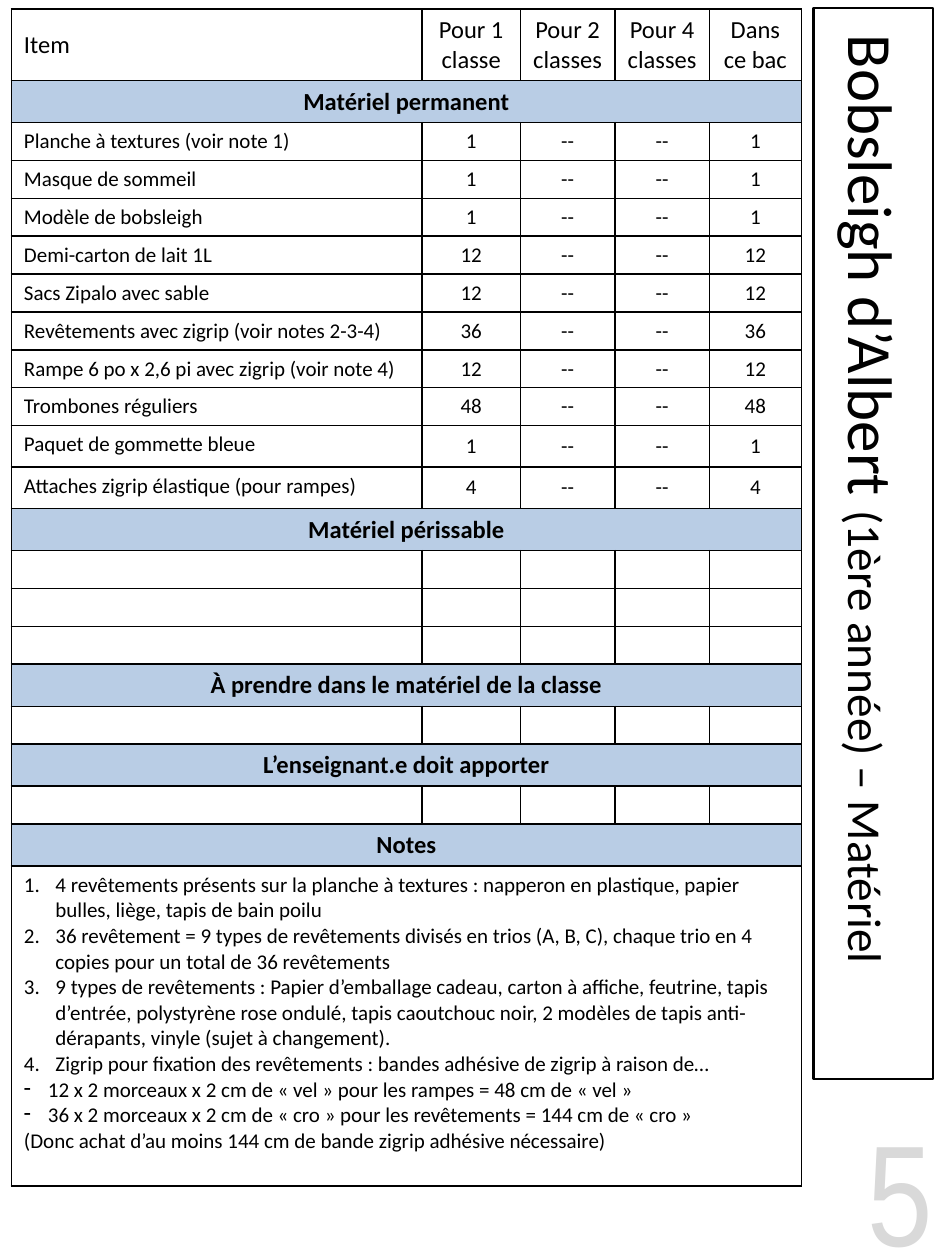
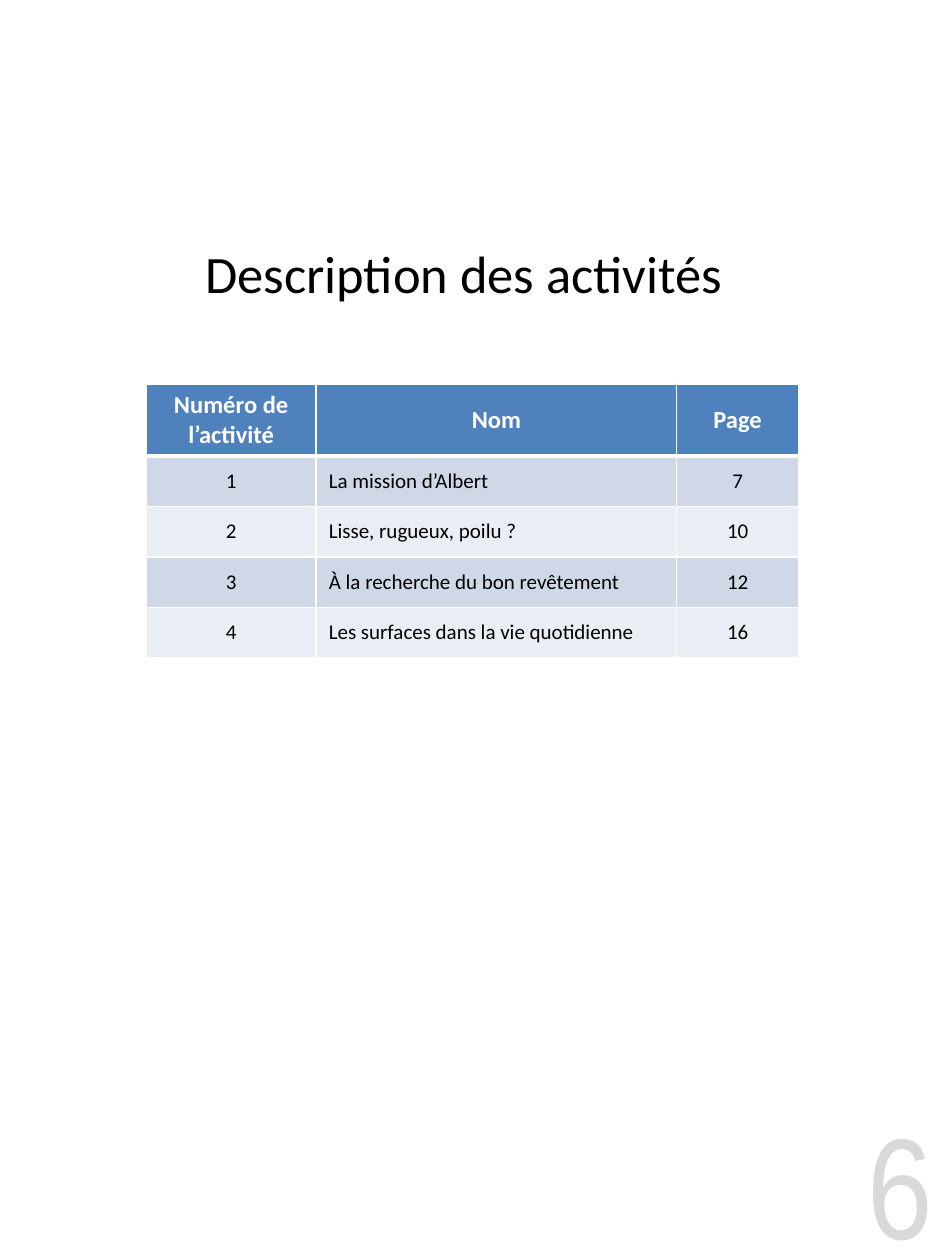
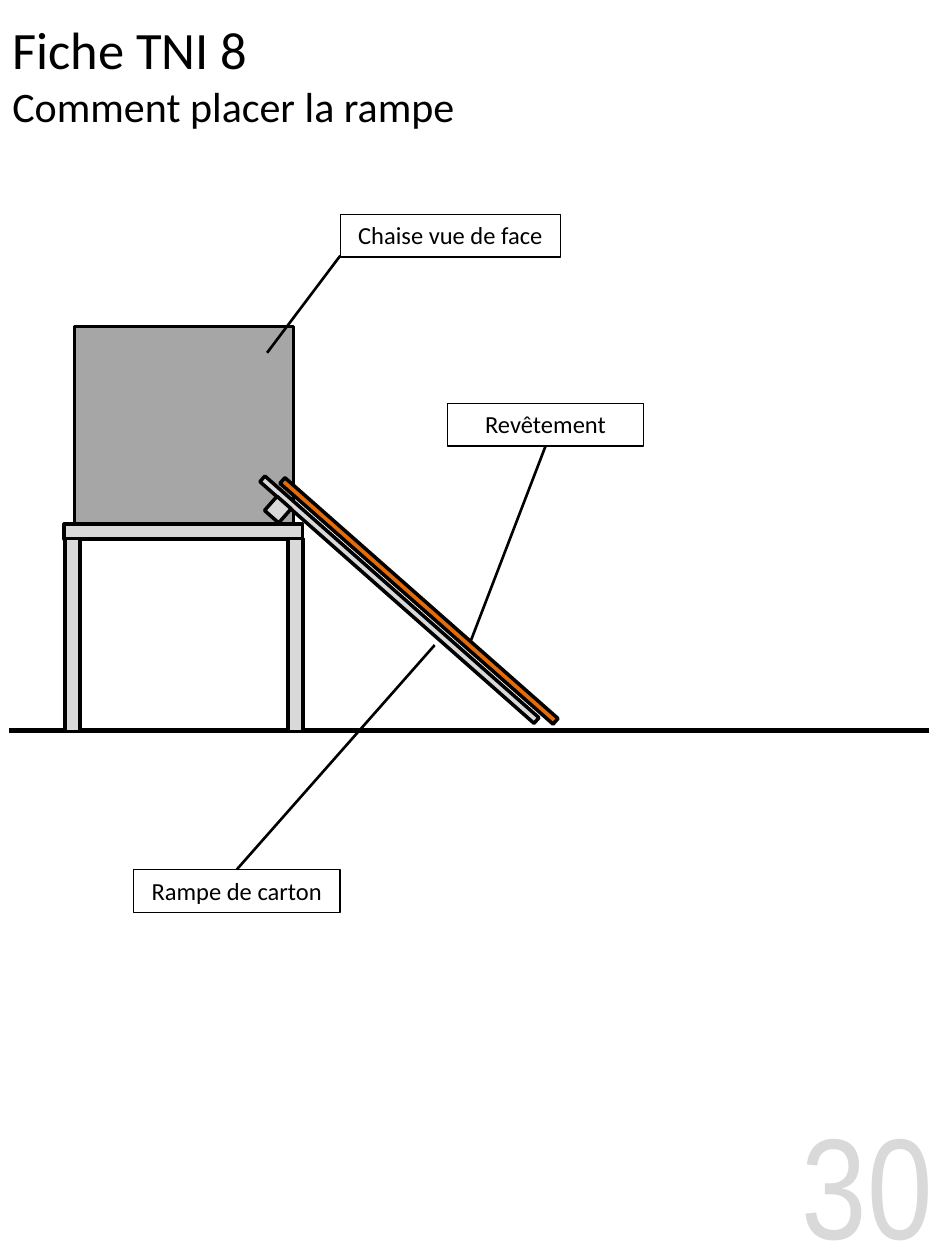
from dataclasses import dataclass

from lxml import etree
from pptx import Presentation
from pptx.dml.color import RGBColor as RGB
from pptx.enum.shapes import MSO_CONNECTOR as CONN, MSO_SHAPE as SHAPE
from pptx.enum.text import MSO_ANCHOR as ANCHOR, PP_ALIGN as ALIGN
from pptx.oxml.ns import qn
from pptx.util import Inches, Pt


@dataclass(frozen=True)
class Theme:
    font: str = "Calibri"
    number_font: str = "Arial Narrow"
    black: str = "000000"
    white: str = "FFFFFF"
    number: str = "D9D9D9"
    band: str = "B9CDE5"
    header: str = "4F81BD"
    odd_row: str = "D0D8E8"
    even_row: str = "E9EDF4"
    chair_back: str = "A6A6A6"
    board: str = "D9D9D9"
    covering: str = "E46C0A"
    number_size: int = 82
    big_title: int = 36
    big_subtitle: int = 27
    title: int = 30
    subtitle: int = 24
    heading: int = 14
    body: int = 12


T = Theme()


def write(tf, lines, sizes, color=T.black, align=ALIGN.LEFT, bold=False, font=T.font):
    """Fill a text frame; each line is a list of runs, sized in order by sizes."""
    for i, runs in enumerate(lines):
        p = tf.paragraphs[0] if i == 0 else tf.add_paragraph()
        p.alignment = align
        if not any(runs):
            etree.SubElement(p._p, qn("a:endParaRPr"), sz=str(sizes[0] * 100))
            continue
        for j, text in enumerate(runs):
            if j and "\v" in runs[j - 1]:
                p.add_line_break()
            r = p.add_run()
            r.text = text.replace("\v", "")
            r.font.name, r.font.size, r.font.bold = font, Pt(sizes[j]), bold
            r.font.color.rgb = RGB.from_string(color)


def style_cell(cell, line, fill=None, bottom=1, anchor=ANCHOR.MIDDLE):
    """Give a table cell its four borders, its fill and its anchor."""
    cell.vertical_anchor = anchor
    tc_pr = cell._tc.get_or_add_tcPr()
    for side in "LRTB":
        width = bottom if side == "B" else 1
        ln = etree.SubElement(tc_pr, qn(f"a:ln{side}"), w=str(Pt(width)))
        solid = etree.SubElement(ln, qn("a:solidFill"))
        etree.SubElement(solid, qn("a:srgbClr"), val=line)
    if fill:
        cell.fill.solid()
        cell.fill.fore_color.rgb = RGB.from_string(fill)
    else:
        cell.fill.background()


prs = Presentation()
prs.slide_width, prs.slide_height = Inches(7.5), Inches(10)

# Page numbers and titles: number, its box, title runs, sizes, title box, alignment, rotation
pages = [
    ("5", (5.75, 8.88, 1.75, 1.12),
     [" Bobsleigh d’Albert ", "(1ère année) – Matériel"], (T.big_title, T.big_subtitle),
     (2.68, 3.84, 8.5, 0.95), ALIGN.LEFT, 90),
    ("6", (6.28, 8.76, 1.22, 1.24),
     ["Description des activités "], (T.title,),
     (0.41, 1.69, 6.64, 0.95), ALIGN.CENTER, 0),
    ("30", (5.79, 8.76, 1.71, 1.24),
     ["Fiche TNI 8 \v", "Comment placer la rampe"], (T.title, T.subtitle),
     (0, 0.01, 4.67, 1.15), ALIGN.LEFT, 0),
]
slides = []
for number, number_box, title, sizes, title_box, align, rotation in pages:
    s = prs.slides.add_slide(prs.slide_layouts[6])
    slides.append(s)
    sp = s.shapes.add_textbox(*map(Inches, number_box))
    sp.text_frame.word_wrap = True
    sp.text_frame.vertical_anchor = ANCHOR.MIDDLE
    write(sp.text_frame, [[number]], [T.number_size], T.number, ALIGN.RIGHT, font=T.number_font)

    sp = s.shapes.add_textbox(*map(Inches, title_box))
    sp.rotation = rotation
    sp.text_frame.word_wrap = True
    sp.text_frame.vertical_anchor = ANCHOR.MIDDLE
    write(sp.text_frame, [title], sizes, align=align)
    if rotation:
        sp.line.color.rgb = RGB.from_string(T.black)
        sp.line.width = Pt(1.5)
material, activities, ramp = slides

# Slide 1: material list
items = [
    ("Planche à textures (voir note 1)", 1),
    ("Masque de sommeil", 1),
    ("Modèle de bobsleigh", 1),
    ("Demi-carton de lait 1L", 12),
    ("Sacs Zipalo avec sable", 12),
    ("Revêtements avec zigrip (voir notes 2-3-4)", 36),
    ("Rampe 6 po x 2,6 pi avec zigrip (voir note 4)", 12),
    ("Trombones réguliers", 48),
    ("Paquet de gommette bleue", 1),
    ("Attaches zigrip élastique (pour rampes)", 4),
]
notes = [
    "4 revêtements présents sur la planche à textures : napperon en plastique, papier bulles, "
    "liège, tapis de bain poilu",
    "36 revêtement = 9 types de revêtements divisés en trios (A, B, C), chaque trio en 4 copies "
    "pour un total de 36 revêtements",
    "9 types de revêtements : Papier d’emballage cadeau, carton à affiche, feutrine, tapis "
    "d’entrée, polystyrène rose ondulé, tapis caoutchouc noir, 2 modèles de tapis "
    "anti-dérapants, vinyle (sujet à changement).",
    "Zigrip pour fixation des revêtements : bandes adhésive de zigrip à raison de…",
    "12 x 2 morceaux x 2 cm de « vel » pour les rampes = 48 cm de « vel »",
    "36 x 2 morceaux x 2 cm de « cro » pour les revêtements = 144 cm de « cro »",
    "(Donc achat d’au moins 144 cm de bande zigrip adhésive nécessaire)",
]
empty = [""] * 5
rows = [
    ["Item", "Pour 1 classe", "Pour 2 classes", "Pour 4 classes", "Dans ce bac"],
    ["Matériel permanent"],
    *[[name, str(n), "--", "--", str(n)] for name, n in items],
    ["Matériel périssable"], empty, empty, empty,
    ["À prendre dans le matériel de la classe"], empty,
    ["L’enseignant.e doit apporter"], empty,
    ["Notes"],
    notes,
]
last = len(rows) - 1
widths = [3.26, 0.78, 0.75, 0.75, 0.73]
table = material.shapes.add_table(len(rows), 5, Inches(0.09), Inches(0.07),
                                  Inches(6.27), Inches(9.29)).table
table.first_row = table.horz_banding = False
for column, width in zip(table.columns, widths):
    column.width = Inches(width)
for i, row in enumerate(rows):
    is_band, is_notes = len(row) == 1, i == last
    is_tall = row[0].startswith(("Paquet", "Attaches"))
    height = (0.57 if i == 0 else 2.54 if is_notes else 0.33 if is_band or is_tall else 0.3)
    table.rows[i].height = Inches(height)
    size = T.heading if is_band or i == 0 else T.body
    for j in range(5):
        cell = table.cell(i, j)
        top = is_notes or (is_tall and j == 0)
        style_cell(cell, T.black, T.band if is_band else None,
                   anchor=ANCHOR.TOP if top else ANCHOR.MIDDLE)
        if not is_notes and j < len(row):
            write(cell.text_frame, [[row[j]]], [size], bold=is_band,
                  align=ALIGN.CENTER if is_band or j else ALIGN.LEFT)
    if is_band or is_notes:
        table.cell(i, 0).merge(table.cell(i, 4))

# Notes: four numbered lines, two dashes, one plain line
tf = table.cell(last, 0).text_frame
write(tf, [[note] for note in notes], [T.body])
for i, p in enumerate(tf.paragraphs[:6]):
    indent = Inches(0.25 if i < 4 else 0.19)
    p_pr = p._p.get_or_add_pPr()
    p_pr.set("marL", str(indent))
    p_pr.set("indent", str(-indent))
    if i < 4:
        etree.SubElement(p_pr, qn("a:buAutoNum"), type="arabicPeriod")
    else:
        etree.SubElement(p_pr, qn("a:buChar"), char="-")

# Slide 2: list of activities
rows = [
    ("Numéro de\nl’activité", "Nom", "Page"),
    ("1", "La mission d’Albert", "7"),
    ("2", "Lisse, rugueux, poilu ?", "10"),
    ("3", "À la recherche du bon revêtement", "12"),
    ("4", "Les surfaces dans la vie quotidienne", "16"),
]
table = activities.shapes.add_table(5, 3, Inches(1.16), Inches(3.05),
                                    Inches(5.18), Inches(2.19)).table
table.first_row = table.horz_banding = False
for column, width in zip(table.columns, [1.35, 2.86, 0.97]):
    column.width = Inches(width)
for i, row in enumerate(rows):
    head = i == 0
    table.rows[i].height = Inches(0.57 if head else 0.4)
    fill = T.header if head else T.odd_row if i % 2 else T.even_row
    for j, text in enumerate(row):
        cell = table.cell(i, j)
        style_cell(cell, T.white, fill, bottom=3 if head else 1)
        write(cell.text_frame, [[line] for line in text.split("\n")],
              [T.heading if head else T.body], T.white if head else T.black,
              ALIGN.LEFT if j == 1 and not head else ALIGN.CENTER, head)

# Slide 3: chair, ramp and labels, from back to front
# Lines: start, end, width; boxes: place, rotation, fill, line width, label
drawing = [
    ((0.07, 5.8), (7.37, 5.8), 3),
    ((0.59, 2.59, 1.74, 1.57), 0, T.chair_back, 2, ""),
    ((0.51, 4.16, 1.89, 0.12), 0, T.board, 2, ""),
    ((-0.19, 4.98, 1.53, 0.12), 270, T.board, 2, ""),
    ((1.58, 4.98, 1.53, 0.12), 270, T.board, 2, ""),
    ((2.12, 2.8), (2.7, 2.03), 1.5),
    ((2.7, 1.7, 1.75, 0.34), 0, None, 0.75, "Chaise vue de face"),
    ((3.72, 5.13), (4.33, 3.54), 1.5),
    ((3.55, 3.2, 1.56, 0.34), 0, None, 0.75, "Revêtement"),
    ((3.45, 5.12), (1.88, 6.9), 1.5),
    ((1.06, 6.9, 1.64, 0.34), 0, None, 0.75, "Rampe de carton"),
    ((1.72, 4.73, 2.9, 0.06), 41.4, T.board, 2, ""),
    ((1.88, 4.74, 2.89, 0.06), 41.4, T.covering, 2, ""),
    ((2.13, 3.97, 0.15, 0.15), 41.4, T.board, 2, ""),
]
for part in drawing:
    if len(part) == 3:
        start, end, width = part
        sp = ramp.shapes.add_connector(CONN.STRAIGHT, *map(Inches, start + end))
        etree.SubElement(sp._element.spPr, qn("a:effectLst"))
    else:
        box, rotation, fill, width, label = part
        sp = ramp.shapes.add_shape(SHAPE.RECTANGLE, *map(Inches, box))
        sp.shadow.inherit = False
        sp.rotation = rotation
        if fill:
            sp.fill.solid()
            sp.fill.fore_color.rgb = RGB.from_string(fill)
        else:
            sp.fill.background()
        if label:
            sp.text_frame.word_wrap = True
            sp.text_frame.vertical_anchor = ANCHOR.TOP
            write(sp.text_frame, [[label]], [T.heading], align=ALIGN.CENTER)
    sp.line.color.rgb = RGB.from_string(T.black)
    sp.line.width = Pt(width)

prs.save("out.pptx")
